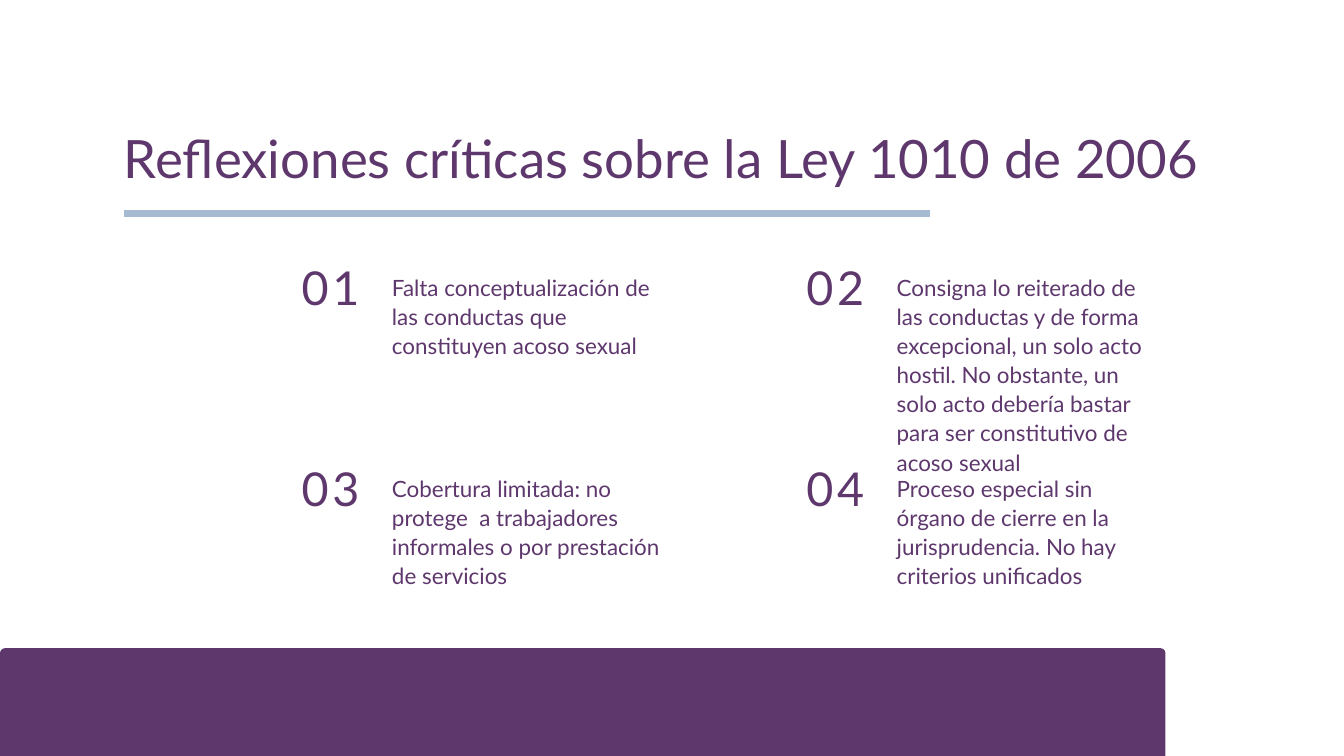
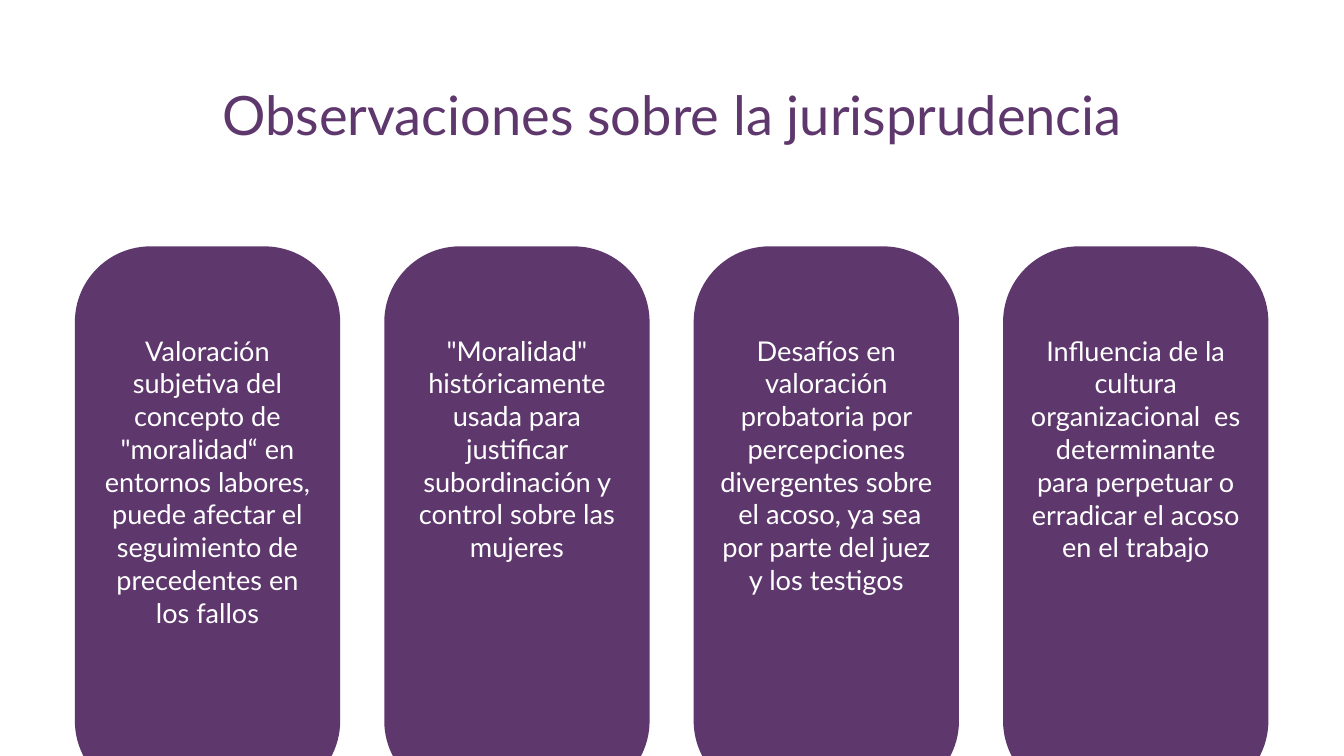
import dataclasses

import lxml.etree
import pptx
import pptx.dml.color
import pptx.enum.shapes
import pptx.enum.text
import pptx.oxml.ns
import pptx.util

PX = 9525  # EMU in one px
SLIDE_W, SLIDE_H = 1920, 1080

PURPLE = pptx.dml.color.RGBColor(0x5E, 0x37, 0x6D)
BLUE = pptx.dml.color.RGBColor(0xA6, 0xBB, 0xD1)
WHITE = pptx.dml.color.RGBColor(0xFF, 0xFF, 0xFF)
FONT = "Lato"
LEFT = pptx.enum.text.PP_ALIGN.LEFT
CENTER = pptx.enum.text.PP_ALIGN.CENTER


@dataclasses.dataclass(frozen=True)
class Box:
    x: int
    y: int
    w: int
    h: int

    def emu(self) -> list[int]:
        return [v * PX for v in (self.x, self.y, self.w, self.h)]


@dataclasses.dataclass(frozen=True)
class Style:
    size: float
    line: float
    color: pptx.dml.color.RGBColor = PURPLE
    align: pptx.enum.text.PP_ALIGN = LEFT
    tracking: int = 0  # points between letters


@dataclasses.dataclass(frozen=True)
class Reflection:
    number: str
    text: str
    height: int


@dataclasses.dataclass(frozen=True)
class Card:
    text: str
    size: float
    height: int


NUMBER = Style(50, 60, tracking=4)
BODY = Style(24, 31.2)

REFLECTIONS = [
    Reflection("01", "Falta conceptualización de las conductas que constituyen "
               "acoso sexual", 125),
    Reflection("02", "Consigna lo reiterado de  las conductas y de forma excepcional, "
               "un solo acto hostil. No obstante, un solo acto debería bastar para "
               "ser constitutivo de acoso sexual", 249),
    Reflection("03", "Cobertura limitada: no protege  a trabajadores informales o "
               "por prestación de servicios", 166),
    Reflection("04", "Proceso especial sin órgano de cierre en la jurisprudencia. "
               "No hay criterios unificados", 166),
]

CARDS = [
    Card('Valoración subjetiva del concepto de "moralidad“ en entornos labores, '
         "puede afectar el seguimiento de precedentes en los fallos", 29, 424),
    Card('"Moralidad" históricamente usada para justificar subordinación y '
         "control sobre las mujeres", 29.2, 330),
    Card("Desafíos en valoración probatoria por percepciones divergentes sobre  "
         "el acoso, ya sea por parte del juez y los testigos", 29.2, 377),
    Card("Influencia de la cultura organizacional  es determinante para "
         "perpetuar o erradicar el acoso en el trabajo", 29, 330),
]


def add_text(s: pptx.slide.Slide, box: Box, text: str, style: Style) -> None:
    tf = s.shapes.add_textbox(*box.emu()).text_frame
    tf.word_wrap = True
    tf.auto_size = pptx.enum.text.MSO_AUTO_SIZE.SHAPE_TO_FIT_TEXT
    tf.margin_left = tf.margin_top = tf.margin_right = tf.margin_bottom = 0
    p = tf.paragraphs[0]
    p.alignment = style.align
    p.line_spacing = pptx.util.Pt(style.line)
    r = p.add_run()
    r.text = text
    r.font.name = FONT
    r.font.size = pptx.util.Pt(style.size)
    r.font.color.rgb = style.color
    if style.tracking:
        r.font._element.set("spc", str(style.tracking * 100))


def add_panel(s: pptx.slide.Slide, box: Box, radius: int) -> None:
    sp = s.shapes.add_shape(
        pptx.enum.shapes.MSO_SHAPE.ROUNDED_RECTANGLE, *box.emu())
    sp.adjustments[0] = radius / min(box.w, box.h)
    sp.shadow.inherit = False
    sp.fill.solid()
    sp.fill.fore_color.rgb = PURPLE
    sp.line.fill.background()


def add_rule(s: pptx.slide.Slide, x1: int, x2: int, y: int) -> None:
    ln = s.shapes.add_connector(
        pptx.enum.shapes.MSO_CONNECTOR.STRAIGHT, x1 * PX, y * PX, x2 * PX, y * PX)
    ln.line.color.rgb = BLUE
    ln.line.width = pptx.util.Pt(8.25)
    lxml.etree.SubElement(ln._element.spPr, pptx.oxml.ns.qn("a:effectLst"))


def build_reflections(s: pptx.slide.Slide) -> None:
    # Bottom band, title and rule
    add_panel(s, Box(0, 926, 1665, 160), 7)
    add_text(s, Box(177, 180, 1567, 91),
             "Reflexiones críticas sobre la Ley 1010 de 2006", Style(56.6, 67.9))
    add_rule(s, 177, 1328, 305)

    # Numbered grid, two by two
    for i, item in enumerate(REFLECTIONS):
        row, col = divmod(i, 2)
        x, y = 431 + col * 721, 370 + row * 287
        add_text(s, Box(x, y, 89, 81), item.number, NUMBER)
        add_text(s, Box(x + 129, y + 18, 383, item.height), item.text, BODY)


def build_observations(s: pptx.slide.Slide) -> None:
    # Title
    add_text(s, Box(221, 132, 1478, 82), "Observaciones sobre la jurisprudencia",
             Style(58.1, 58.1, align=CENTER))

    # Row of cards running off the bottom edge
    card_w, text_w, gap = 379, 305, 63
    left = (SLIDE_W - len(CARDS) * card_w - (len(CARDS) - 1) * gap) // 2
    for i, card in enumerate(CARDS):
        x = left + i * (card_w + gap)
        add_panel(s, Box(x, 352, card_w, 786), 108)
        add_text(s, Box(x + (card_w - text_w) // 2, 477, text_w, card.height),
                 card.text, Style(card.size, 35.1, WHITE, CENTER))


def main() -> None:
    prs = pptx.Presentation()
    prs.slide_width, prs.slide_height = SLIDE_W * PX, SLIDE_H * PX
    for build in (build_reflections, build_observations):
        build(prs.slides.add_slide(prs.slide_layouts[6]))
    prs.save("out.pptx")


if __name__ == "__main__":
    main()
